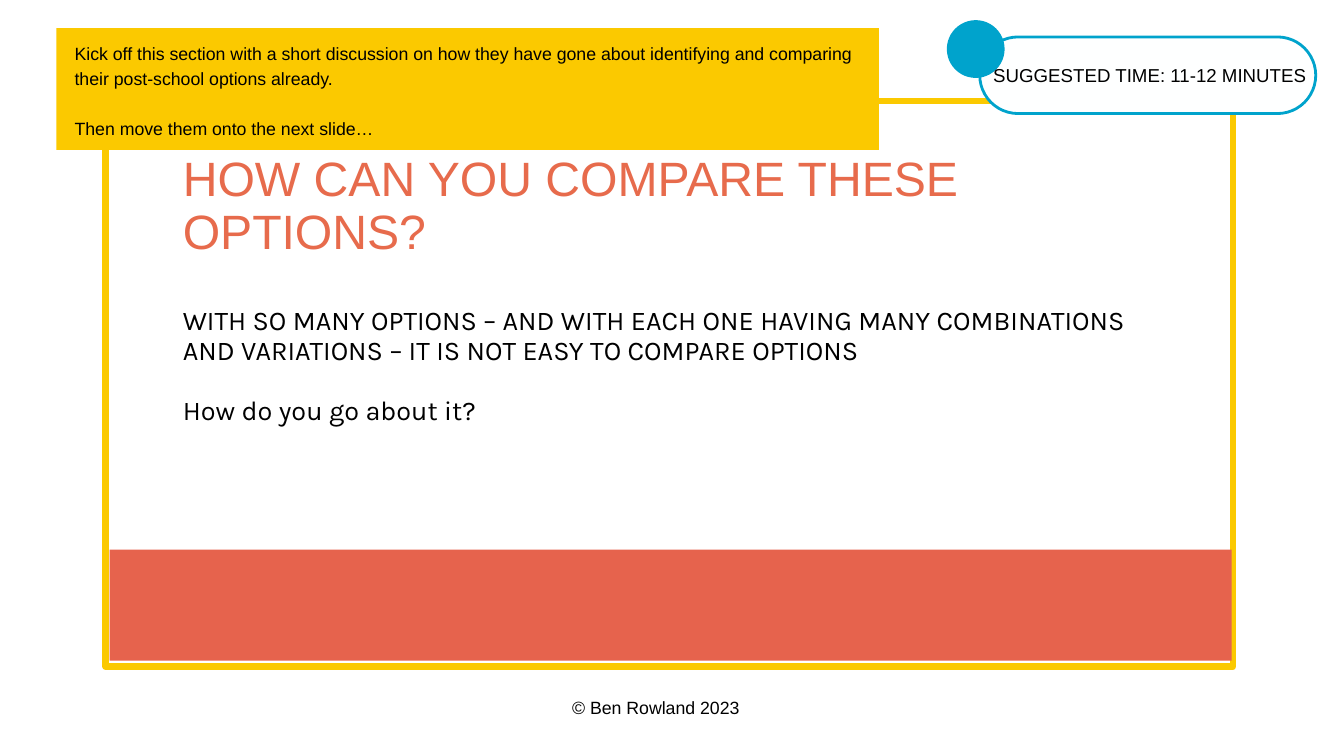
"""Build the slide that asks how to compare post-school options."""
from dataclasses import dataclass
from typing import Optional

from lxml import etree
from pptx import Presentation
from pptx import util as u
from pptx.dml.color import RGBColor
from pptx.enum import shapes, text
from pptx.oxml.ns import qn

PX_PER_INCH = 100
EMU_PER_PX = 914400 // PX_PER_INCH


@dataclass(frozen=True)
class Theme:
    yellow: str = "FBC900"
    coral: str = "E6634D"
    title: str = "E76B4C"
    blue: str = "00A3CC"
    paper: str = "FEFFFF"
    ink: str = "000000"
    sans: str = "Arial"
    body: str = "Karla"
    title_size: float = 51.6
    body_size: float = 29
    label_size: float = 20
    note_size: float = 19


@dataclass(frozen=True)
class Area:
    left: int
    top: int
    width: int
    height: int


@dataclass(frozen=True)
class Panel:
    kind: shapes.MSO_SHAPE
    area: Area
    fill: Optional[str] = None
    line: Optional[str] = None
    weight: float = 0


@dataclass(frozen=True)
class Copy:
    area: Area
    paragraphs: tuple[str, ...]
    size: float
    leading: float
    font: str
    color: str = Theme.ink
    align: text.PP_ALIGN = text.PP_ALIGN.LEFT


THEME = Theme()
KIND = shapes.MSO_SHAPE

PANELS = (
    Panel(KIND.RECTANGLE, Area(157, 150, 1678, 842), line=THEME.yellow, weight=6.75),
    Panel(KIND.RECTANGLE, Area(163, 818, 1670, 165), fill=THEME.coral),
    Panel(KIND.ROUNDED_RECTANGLE, Area(1458, 55, 500, 114), THEME.paper, THEME.blue, 3),
    Panel(KIND.OVAL, Area(1409, 30, 86, 86), fill=THEME.blue),
    Panel(KIND.RECTANGLE, Area(84, 42, 1224, 181), fill=THEME.yellow),
)

TITLE = Copy(Area(272, 228, 1307, 160), ("HOW CAN YOU COMPARE THESE OPTIONS?",),
             THEME.title_size, 56.8, THEME.sans, THEME.title)
BODY = Copy(
    Area(272, 456, 1455, 178),
    ("WITH SO MANY OPTIONS – AND WITH EACH ONE HAVING MANY COMBINATIONS "
     "AND VARIATIONS – IT IS NOT EASY TO COMPARE OPTIONS",
     "How do you go about it?"),
    THEME.body_size, 32.1, THEME.body)
LABELS = (
    Copy(Area(851, 1032, 250, 35), ("© Ben Rowland 2023",),
         THEME.note_size, 26.6, THEME.sans, align=text.PP_ALIGN.CENTER),
    Copy(Area(1474, 90, 474, 38), ("SUGGESTED TIME: 11-12 MINUTES",),
         THEME.label_size, 28, THEME.sans, align=text.PP_ALIGN.CENTER),
    Copy(Area(111, 59, 1176, 145),
         ("Kick off this section with a short discussion on how they have gone about "
          "identifying and comparing their post-school options already.",
          "Then move them onto the next slide…"),
         THEME.note_size, 26.6, THEME.sans),
)


def px(length: int) -> u.Emu:
    return u.Emu(length * EMU_PER_PX)


def bounds(area: Area) -> tuple[u.Emu, u.Emu, u.Emu, u.Emu]:
    return px(area.left), px(area.top), px(area.width), px(area.height)


def draw_panel(page, panel: Panel) -> None:
    shape = page.shapes.add_shape(panel.kind, *bounds(panel.area))
    shape.shadow.inherit = False
    if panel.kind == KIND.ROUNDED_RECTANGLE:
        shape.adjustments[0] = 0.5
    if panel.fill:
        shape.fill.solid()
        shape.fill.fore_color.rgb = RGBColor.from_string(panel.fill)
    else:
        shape.fill.background()
    if panel.line:
        shape.line.color.rgb = RGBColor.from_string(panel.line)
        shape.line.width = u.Pt(panel.weight)
    else:
        shape.line.fill.background()


def write_copy(box, copy: Copy) -> None:
    box.left, box.top, box.width, box.height = bounds(copy.area)
    frame = box.text_frame
    frame.margin_left = frame.margin_top = frame.margin_right = frame.margin_bottom = 0
    frame.word_wrap = True
    frame.auto_size = text.MSO_AUTO_SIZE.NONE
    frame.vertical_anchor = text.MSO_ANCHOR.TOP
    for index, words in enumerate(copy.paragraphs):
        para = frame.add_paragraph() if index else frame.paragraphs[0]
        properties = para._p.get_or_add_pPr()
        properties.set("marL", "0")
        properties.set("indent", "0")
        etree.SubElement(properties, qn("a:buNone"))
        para.alignment = copy.align
        para.line_spacing = u.Pt(copy.leading)
        para.space_before = u.Pt(copy.leading if index else 0)
        span = para.add_run()
        span.text = words
        span.font.size = u.Pt(copy.size)
        span.font.name = copy.font
        span.font.color.rgb = RGBColor.from_string(copy.color)


def main() -> None:
    deck = Presentation()
    deck.slide_width, deck.slide_height = px(2000), px(1125)
    page = deck.slides.add_slide(deck.slide_layouts[1])
    write_copy(page.shapes.title, TITLE)
    write_copy(page.placeholders[1], BODY)
    for panel in PANELS:
        draw_panel(page, panel)
    for label in LABELS:
        write_copy(page.shapes.add_textbox(*bounds(label.area)), label)
    deck.save("out.pptx")


if __name__ == "__main__":
    main()
